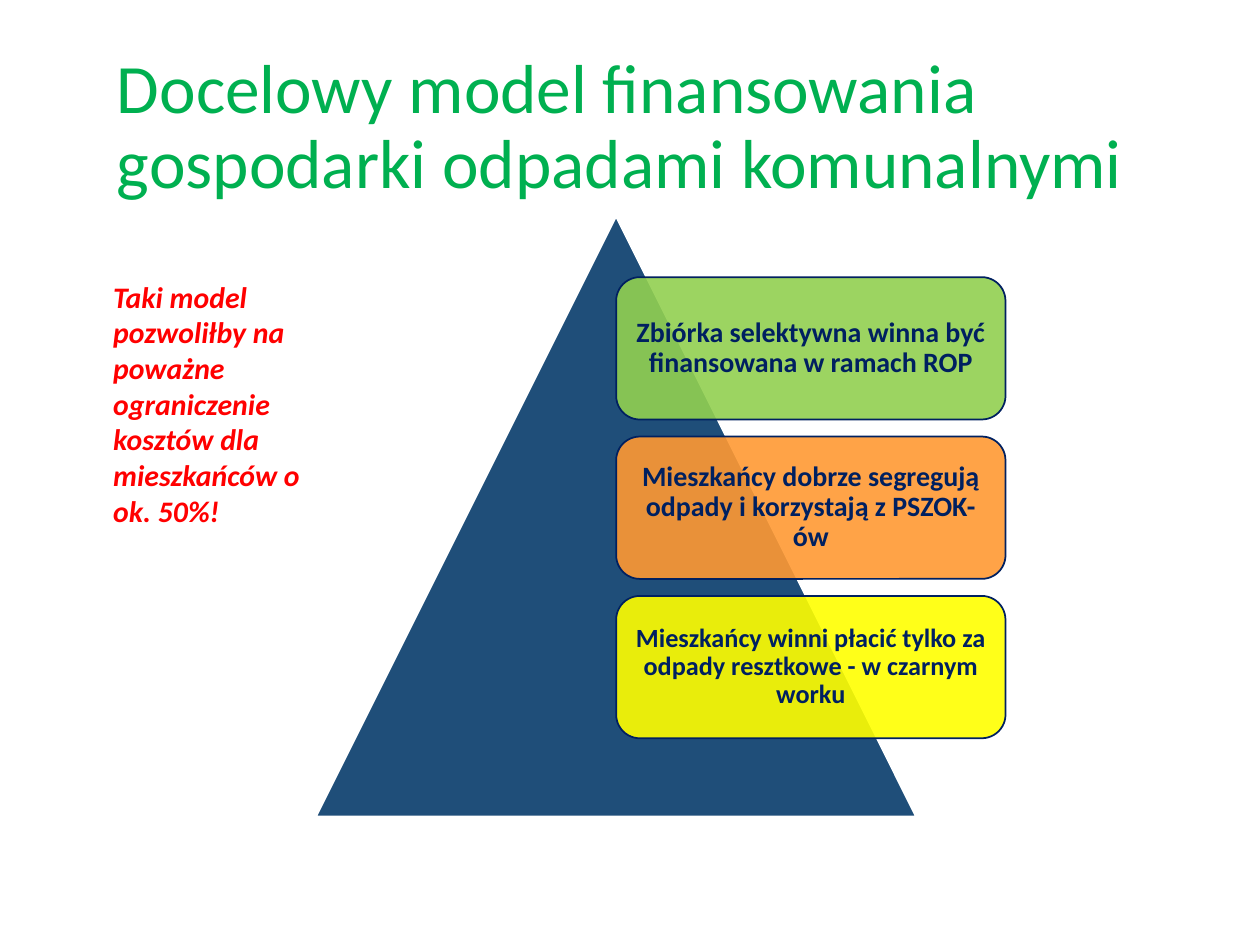
from lxml.etree import SubElement
from pptx import Presentation
from pptx.dml.color import RGBColor
from pptx.enum.shapes import MSO_SHAPE
from pptx.enum.text import MSO_ANCHOR, PP_ALIGN
from pptx.oxml.ns import qn
from pptx.util import Inches, Pt

COLORS = {"title": "00B050", "note": "FF0000", "navy": "002060", "white": "FFFFFF",
          "pyramid": "1F4E79", "green": "92D050", "orange": "FF9933", "yellow": "FFFF00"}

TITLE = "Docelowy model finansowania gospodarki odpadami komunalnymi"
NOTE = "Taki model pozwoliłby na poważne ograniczenie kosztów dla mieszkańców o ok. 50%!"
# text, fill, font size, inset
CARDS = [
    ("Zbiórka selektywna winna być finansowana w ramach ROP", "green", 16, 0.07),
    ("Mieszkańcy dobrze segregują odpady i korzystają z PSZOK-ów", "orange", 16, 0.07),
    ("Mieszkańcy winni płacić tylko za odpady resztkowe - w czarnym worku", "yellow", 15, 0.06),
]
CARD_LEFT, CARD_TOP, CARD_W, CARD_H, CARD_STEP = 4.89, 2.2, 3.09, 1.13, 1.265
CARD_PAD = 0.055  # keeps text clear of the rounded corners


def rgb(name):
    return RGBColor.from_string(COLORS[name])


def set_text(sp, text, size, color, bold=False, italic=False, align=PP_ALIGN.LEFT,
             anchor=MSO_ANCHOR.TOP, spacing=1.0, inset=(0.1, 0.05)):
    tf = sp.text_frame
    tf.word_wrap = True
    tf.vertical_anchor = anchor
    tf.margin_left = tf.margin_right = Inches(inset[0])
    tf.margin_top = tf.margin_bottom = Inches(inset[1])
    p = tf.paragraphs[0]
    p.alignment = align
    p.line_spacing = spacing
    r = p.add_run()
    r.text = text
    r.font.name = "Calibri"
    r.font.size = Pt(size)
    r.font.bold = bold
    r.font.italic = italic
    r.font.color.rgb = rgb(color)


def add_box(s, box, text, size, color, **fmt):
    sp = s.shapes.add_textbox(*map(Inches, box))
    set_text(sp, text, size, color, **fmt)


def add_figure(s, kind, box, fill, line, opacity=100):
    sp = s.shapes.add_shape(kind, *map(Inches, box))
    sp.shadow.inherit = False
    sp.fill.solid()
    sp.fill.fore_color.rgb = rgb(fill)
    sp.line.color.rgb = rgb(line)
    sp.line.width = Pt(1)
    if opacity < 100:
        color = sp.fill._xPr.find(qn("a:solidFill"))[0]
        SubElement(color, qn("a:alpha")).set("val", str(opacity * 1000))
    return sp


def main():
    prs = Presentation()
    prs.slide_width, prs.slide_height = Inches(10), Inches(7.5)
    s = prs.slides.add_slide(prs.slide_layouts[6])

    add_box(s, (0.83, 0.42, 8.34, 1.2), TITLE, 39.6, "title",
            anchor=MSO_ANCHOR.MIDDLE, spacing=0.9)
    add_figure(s, MSO_SHAPE.ISOSCELES_TRIANGLE, (2.51, 1.72, 4.76, 4.76), "pyramid", "white")

    for i, (text, fill, size, inset) in enumerate(CARDS):
        box = (CARD_LEFT, CARD_TOP + i * CARD_STEP, CARD_W, CARD_H)
        sp = add_figure(s, MSO_SHAPE.ROUNDED_RECTANGLE, box, fill, "navy", opacity=90)
        set_text(sp, text, size, "navy", bold=True, align=PP_ALIGN.CENTER,
                 anchor=MSO_ANCHOR.MIDDLE, spacing=0.9,
                 # the preset already insets text by about one CARD_PAD
                 inset=(inset, inset))

    add_box(s, (0.8, 2.16, 1.77, 2.1), NOTE, 17, "note", bold=True, italic=True)
    prs.save("out.pptx")


if __name__ == "__main__":
    main()
